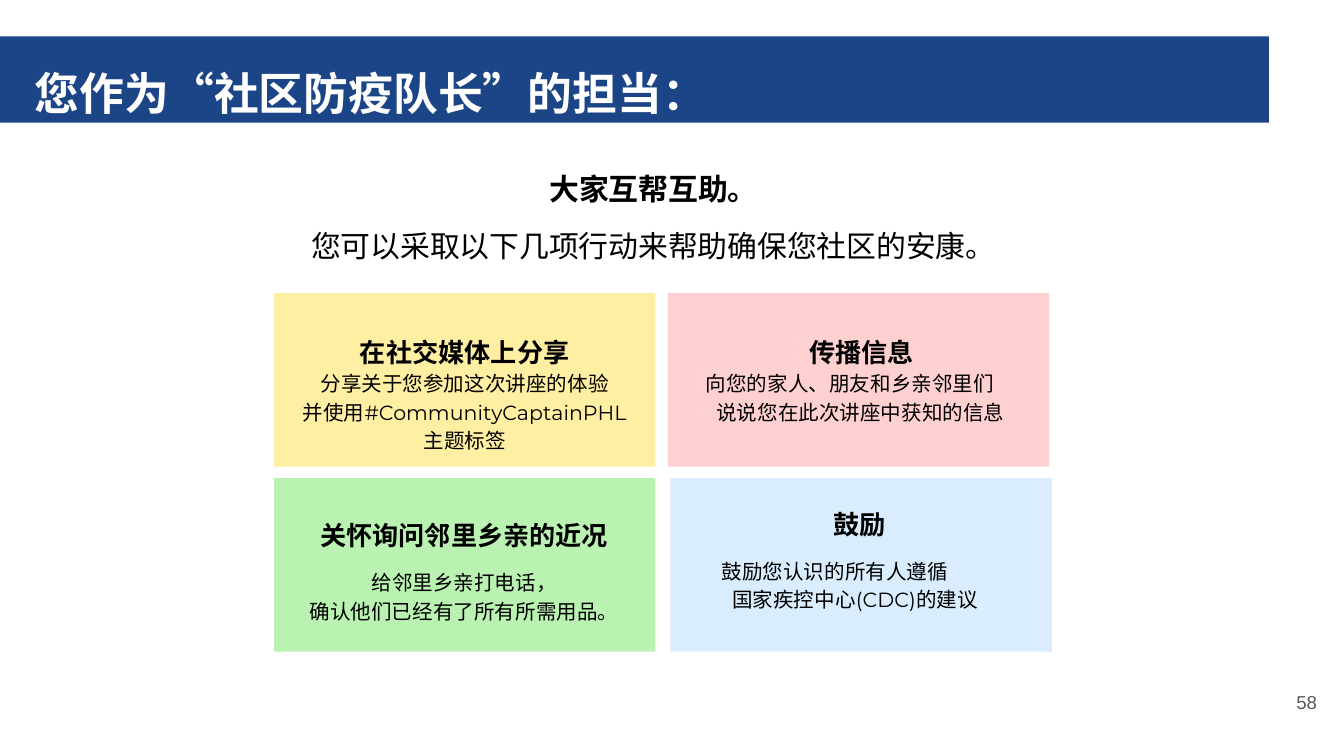
"""Build the slide on how a community captain can help the neighbourhood."""
import pptx
import pptx.dml.color
import pptx.enum.shapes
import pptx.enum.text
import pptx.util

Cm = pptx.util.Cm
Pt = pptx.util.Pt
ALIGN = pptx.enum.text.PP_ALIGN
COLORS = {
    "navy": "1C4587", "yellow": "FFEFA2", "pink": "FED0D0", "green": "B9F2B1",
    "blue": "DAEDFE", "black": "000000", "white": "FFFFFF", "grey": "595959",
}


def add_panel(left, top, width, height, color):
    panel = slide.shapes.add_shape(
        pptx.enum.shapes.MSO_SHAPE.RECTANGLE, Cm(left), Cm(top), Cm(width), Cm(height))
    panel.shadow.inherit = False
    panel.fill.solid()
    panel.fill.fore_color.rgb = pptx.dml.color.RGBColor.from_string(COLORS[color])
    panel.line.fill.background()


def add_text(box, lines, color="black", align=ALIGN.CENTER, inset=(0.18, 0.1), spacing=1.15):
    frame = slide.shapes.add_textbox(*[Cm(length) for length in box]).text_frame
    frame.word_wrap = True
    frame.margin_left = frame.margin_right = Cm(inset[0])
    frame.margin_top = frame.margin_bottom = Cm(inset[1])
    for number, (text, size, bold, font, gap) in enumerate(lines):
        paragraph = frame.add_paragraph() if number else frame.paragraphs[0]
        paragraph.alignment = align
        paragraph.line_spacing = spacing
        if gap:
            paragraph.space_before = Pt(gap)
        rows = text.split("\n")
        if len(rows) > 1:
            paragraph.alignment = ALIGN.LEFT
            properties = paragraph._p.get_or_add_pPr()
            properties.set("marL", str(Cm(0.3)))
            properties.set("indent", str(Cm(-0.2)))
        for row_number, row in enumerate(rows):
            if row_number:
                paragraph.add_line_break()
                properties.set("indent", str(Cm(-0.2)))
            run = paragraph.add_run()
            run.text = row
            run.font.size = Pt(size)
            run.font.bold = bold
            run.font.name = font
            run.font.color.rgb = pptx.dml.color.RGBColor.from_string(COLORS[color])


deck = pptx.Presentation()
deck.slide_width = Cm(25.4)
deck.slide_height = Cm(14.29)
slide = deck.slides.add_slide(deck.slide_layouts[6])

actions = [
    ("yellow", (5.18, 5.54), (5.46, 6.17, 6.65, 2.84), "Montserrat", "在社交媒体上分享", 0,
     ["分享关于您参加这次讲座的体验", "并使用#CommunityCaptainPHL 主题标签"]),
    ("pink", (12.62, 5.54), (13.06, 6.17, 6.45, 2.31), "Montserrat", "传播信息", 0,
     ["向您的家人、朋友和乡亲邻里们\n说说您在此次讲座中获知的信息"]),
    ("green", (5.18, 9.04), (5.36, 9.63, 6.83, 2.84), "Montserrat", "关怀询问邻里乡亲的近况", 8.5,
     ["给邻里乡亲打电话，", "确认他们已经有了所有所需用品。"]),
    ("blue", (12.67, 9.04), (13.36, 9.42, 5.77, 2.44), "Open Sans", "鼓励", 8.5,
     ["鼓励您认识的所有人遵循\n国家疾控中心(CDC)的建议"]),
]
for color, corner, box, heading_font, heading, gap, details in actions:
    add_panel(*corner, 7.21, 3.28, color)
    lines = [(heading, 14, True, heading_font, 0)]
    for number, detail in enumerate(details):
        lines.append((detail, 11, False, "Montserrat", 0 if number else gap))
    add_text(box, lines)

add_text((0.71, 3.02, 23.29, 1.78), [
    ("大家互帮互助。", 16, True, "Montserrat", 0),
    ("您可以采取以下几项行动来帮助确保您社区的安康。", 16, False, "Montserrat", 8.5),
])
add_text((23.55, 12.95, 1.52, 1.09), [("58", 10, False, "Arial", 0)],
         color="grey", align=ALIGN.RIGHT, spacing=1.0)

add_panel(0, 0.69, 23.98, 1.63, "navy")
add_text((0.41, 0.84, 24.31, 0.99),
         [("您作为“社区防疫队长”的担当：", 24, True, "Montserrat", 0)],
         color="white", align=ALIGN.LEFT, inset=(0.25, 0.25))

deck.save("out.pptx")
